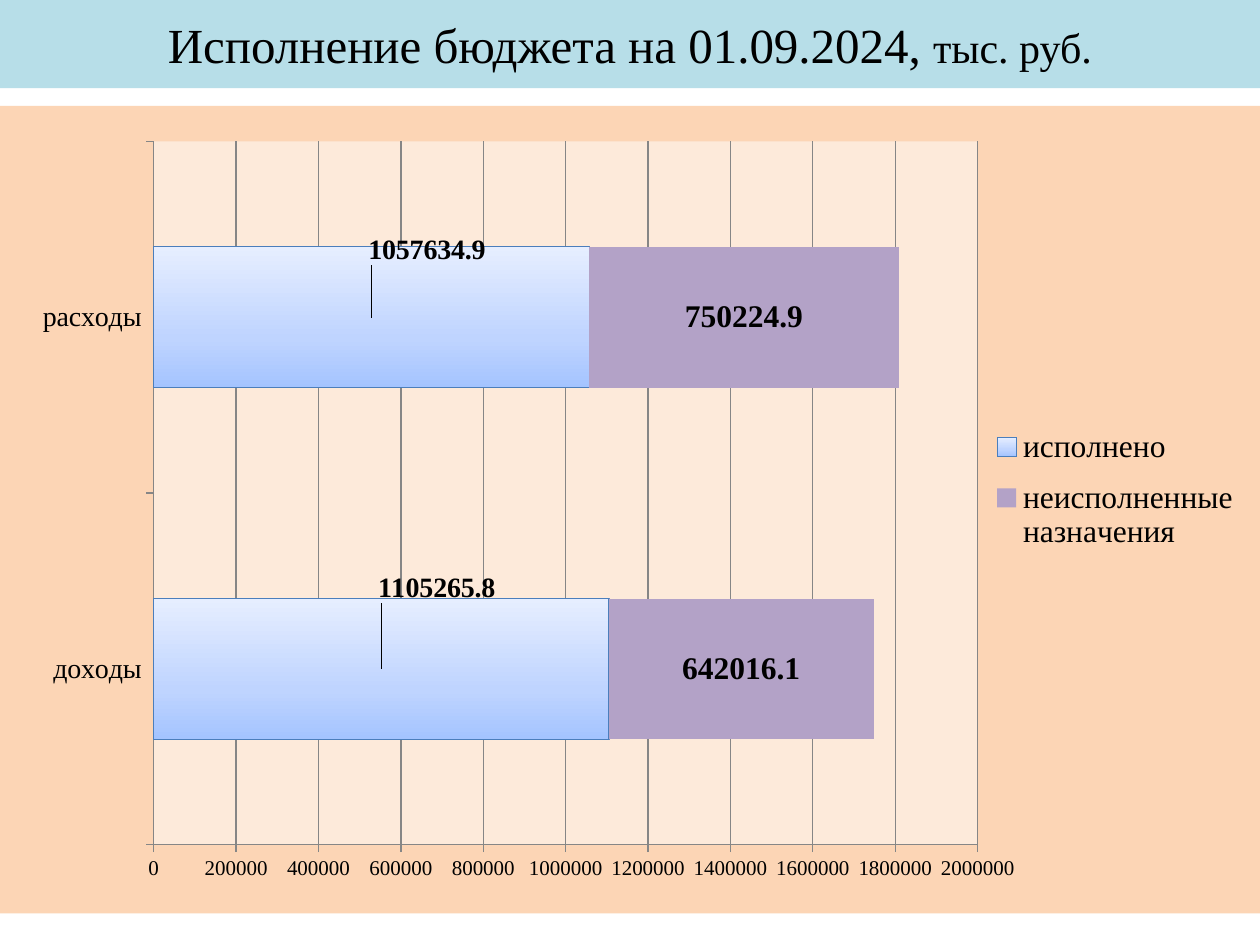
import dataclasses

import pptx
import pptx.chart.data
import pptx.dml.color
import pptx.enum.chart
import pptx.enum.shapes
import pptx.enum.text
import pptx.oxml
import pptx.oxml.ns
import pptx.util

Inches = pptx.util.Inches
FONT = "Times New Roman"
COLORS = {
    "text": "000000", "title": "B7DEE8", "chart": "FCD5B5", "plot": "FDEADA",
    "done_line": "4B7EBC", "open": "B3A2C7", "label": "C6D9F1", "axis": "868686",
}
DONE_STOPS = ((0, "A4C4FF"), (35, "BFD4FF"), (100, "E6EEFF"))


@dataclasses.dataclass
class BudgetSeries:
    name: str
    values: tuple[float, ...]
    label_size: int


SERIES = (
    BudgetSeries("исполнено", (1105265.8, 1057634.9), 16),
    BudgetSeries("неисполненные назначения", (642016.1, 750224.9), 18),
)
# Shift of each "done" label from the bar centre, as a share of the chart
LABEL_SHIFTS = ((0.044, -0.1), (0.044, -0.083))


def rgb(name: str):
    return pptx.dml.color.RGBColor.from_string(COLORS[name])


def style_font(font, size: float, bold: bool = False) -> None:
    font.name = FONT
    font.size = pptx.util.Pt(size)
    font.bold = bold
    font.color.rgb = rgb("text")


def add_text(para, text: str, **font_format) -> None:
    span = para.add_run()
    span.text = text
    style_font(span.font, **font_format)


def xml(body: str):
    """Make an element from a body whose first tag lacks namespaces."""
    tag, rest = body.split(">", 1)
    return pptx.oxml.parse_xml(f"{tag} {pptx.oxml.ns.nsdecls('a', 'c')}>{rest}")


def solid_fill(name: str):
    return xml(f'<c:spPr><a:solidFill><a:srgbClr val="{COLORS[name]}"/></a:solidFill></c:spPr>')


def manual_layout(inner: bool = False, edge: bool = True, **shares: float):
    parts = ['<c:layoutTarget val="inner"/>'] if inner else []
    if edge:
        parts += [f'<c:{axis}Mode val="edge"/>' for axis in "xy"]
    parts += [f'<c:{key} val="{value}"/>' for key, value in shares.items()]
    return xml(f"<c:layout><c:manualLayout>{''.join(parts)}</c:manualLayout></c:layout>")


def add_title(page) -> None:
    box = page.shapes.add_shape(
        pptx.enum.shapes.MSO_SHAPE.RECTANGLE, 0, 0, Inches(10), Inches(0.7))
    box.shadow.inherit = False
    box.fill.solid()
    box.fill.fore_color.rgb = rgb("title")
    box.line.fill.background()
    box.text_frame.word_wrap = True
    box.text_frame.vertical_anchor = pptx.enum.text.MSO_ANCHOR.MIDDLE
    para = box.text_frame.paragraphs[0]
    para.alignment = pptx.enum.text.PP_ALIGN.CENTER
    add_text(para, "Исполнение бюджета на 01.09.2024, ", size=28)
    add_text(para, "тыс. руб.", size=24)


def style_axis(axis, size: float) -> None:
    style_font(axis.tick_labels.font, size)
    axis.major_tick_mark = pptx.enum.chart.XL_TICK_MARK.OUTSIDE
    axis.format.line.color.rgb = rgb("axis")


def style_done_series(series, element) -> None:
    # Gradient bars with an outline
    line = series.format.line
    line.color.rgb = rgb("done_line")
    line.width = pptx.util.Pt(0.75)
    stops = "".join(
        f'<a:gs pos="{share * 1000}"><a:srgbClr val="{color}"/></a:gs>'
        for share, color in DONE_STOPS)
    element.find(pptx.oxml.ns.qn("c:spPr")).insert(0, xml(
        f'<a:gradFill><a:gsLst>{stops}</a:gsLst><a:lin ang="16200000" scaled="0"/></a:gradFill>'))
    # Filled labels moved to the upper edge of the bars
    for index, (x, y) in enumerate(LABEL_SHIFTS):
        style_font(series.points[index].data_label.font, SERIES[0].label_size, bold=True)
        label = element.xpath("c:dLbls/c:dLbl")[index]
        label.insert(1, manual_layout(edge=False, x=x, y=y))
        label.insert(2, solid_fill("label"))


def add_budget_chart(page) -> None:
    data = pptx.chart.data.CategoryChartData()
    data.categories = ("доходы", "расходы")
    for item in SERIES:
        data.add_series(item.name, item.values)
    chart = page.shapes.add_chart(
        pptx.enum.chart.XL_CHART_TYPE.BAR_STACKED,
        0, Inches(0.84), Inches(10), Inches(6.41), data).chart
    chart.has_title = False
    style_font(chart.font, 18)

    # Axes and gridlines
    style_axis(chart.category_axis, 16)
    values = chart.value_axis
    style_axis(values, 12)
    values.minimum_scale, values.maximum_scale = 0, 2000000
    values.major_unit = 200000
    values.has_major_gridlines = True
    values.major_gridlines.format.line.color.rgb = rgb("axis")

    # Bars and their labels
    plot = chart.plots[0]
    plot.gap_width, plot.overlap = 150, 100
    plot.vary_by_categories = False
    for series, item in zip(plot.series, SERIES):
        series.invert_if_negative = False
        series.data_labels.show_value = True
        style_font(series.data_labels.font, item.label_size, bold=True)
    style_done_series(plot.series[0], chart.element.xpath(".//c:ser")[0])
    open_fill = plot.series[1].format.fill
    open_fill.solid()
    open_fill.fore_color.rgb = rgb("open")

    # Legend
    chart.has_legend = True
    chart.legend.position = pptx.enum.chart.XL_LEGEND_POSITION.RIGHT
    chart.legend.include_in_layout = False
    style_font(chart.legend.font, 18)
    legend = chart.element.xpath(".//c:legend")[0]
    for old in legend.xpath("c:layout"):
        legend.remove(old)
    legend.insert(1, manual_layout(x=0.78, y=0.38, w=0.21, h=0.19))

    # Plot area and chart backgrounds
    area = chart.element.xpath(".//c:plotArea")[0]
    for old in area.xpath("c:layout"):
        area.remove(old)
    area.insert(0, manual_layout(inner=True, x=0.122, y=0.044, w=0.654, h=0.871))
    area.append(solid_fill("plot"))
    chart.element.xpath("c:chart")[0].addnext(solid_fill("chart"))


def main() -> None:
    deck = pptx.Presentation()
    deck.slide_width, deck.slide_height = Inches(10), Inches(7.5)
    page = deck.slides.add_slide(deck.slide_layouts[6])
    add_title(page)
    add_budget_chart(page)
    deck.save("out.pptx")


if __name__ == "__main__":
    main()
